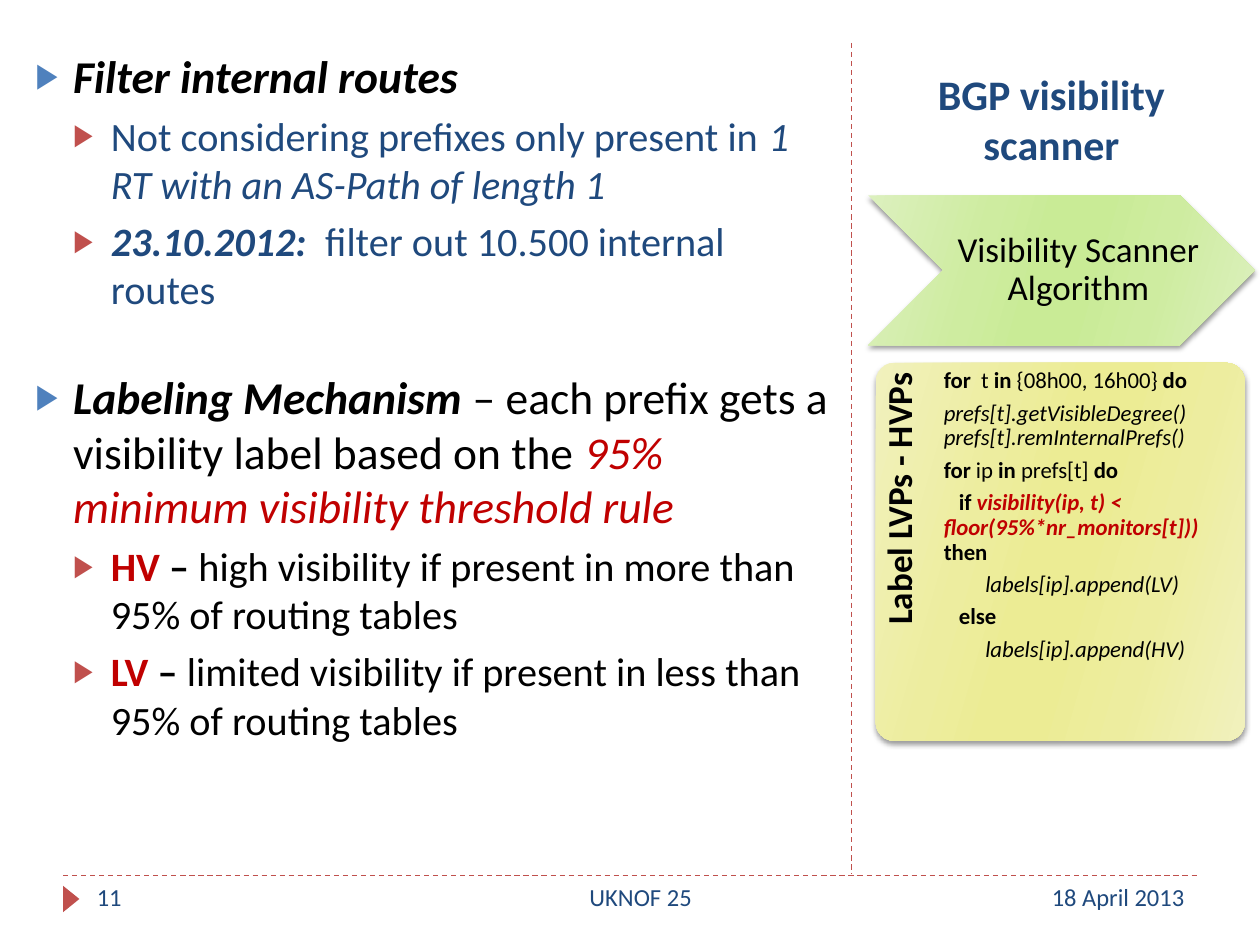
from dataclasses import dataclass

from lxml.etree import SubElement
from pptx import Presentation
from pptx.dml.color import RGBColor
from pptx.enum.dml import MSO_LINE
from pptx.enum.shapes import MSO_CONNECTOR, MSO_SHAPE
from pptx.enum.text import MSO_ANCHOR, MSO_AUTO_SIZE, PP_ALIGN
from pptx.oxml import parse_xml
from pptx.oxml.ns import nsdecls, qn
from pptx.util import Inches, Pt

BLACK = RGBColor(0x00, 0x00, 0x00)
NAVY = RGBColor(0x1F, 0x49, 0x7D)
BLUE = RGBColor(0x4F, 0x81, 0xBD)
RED = RGBColor(0xC0, 0x50, 0x4D)
DARK_RED = RGBColor(0xC0, 0x00, 0x00)
GREENS = [RGBColor(0xDC, 0xF0, 0xBE), RGBColor(0xCE, 0xEC, 0xA0), RGBColor(0xC9, 0xEB, 0x96)]
YELLOWS = [RGBColor(0xF1, 0xF1, 0xBD), RGBColor(0xED, 0xED, 0x9F), RGBColor(0xEC, 0xEC, 0x94)]
FONT = "Calibri"
BULLET_SIZES = [26, 23]
BULLET_COLORS = [BLUE, RED]


@dataclass
class Span:
    text: str
    bold: bool = False
    italic: bool = False
    color: RGBColor = BLACK


@dataclass
class Bullet:
    level: int
    spans: list[Span]
    before: float


@dataclass
class CodeLine:
    spans: list[Span]
    indent: float = 0


BULLETS = [
    Bullet(0, [Span("Filter internal routes", True, True)], 6),
    Bullet(1, [Span("Not considering prefixes only present in ", color=NAVY),
               Span("1 RT with an AS-Path of length 1", italic=True, color=NAVY)], 5),
    Bullet(1, [Span("23.10.2012: ", True, True, NAVY),
               Span(" filter out 10.500 internal routes", color=NAVY)], 5),
    Bullet(0, [Span("Labeling Mechanism ", True, True),
               Span("– each prefix gets a visibility label based on the "),
               Span("95% minimum visibility threshold rule", italic=True, color=DARK_RED)], 32),
    Bullet(1, [Span("HV", True, color=DARK_RED), Span(" – ", True),
               Span("high visibility if present in more than 95% of routing tables")], 5),
    Bullet(1, [Span("LV", True, color=DARK_RED), Span(" – ", True),
               Span("limited visibility if present in less than 95% of routing tables")], 5),
]

CODE = [
    CodeLine([Span("for ", True), Span(" t "), Span("in", True),
              Span(" {08h00, 16h00} "), Span("do", True)]),
    CodeLine([Span("prefs[t].getVisibleDegree() prefs[t].remInternalPrefs()", italic=True)]),
    CodeLine([Span("for ", True), Span("ip "), Span("in ", True),
              Span("prefs[t] "), Span("do", True)]),
    CodeLine([Span("if ", True),
              Span("visibility(ip, t) < floor(95%*nr_monitors[t])) ", True, True, DARK_RED),
              Span("then", True)], 0.12),
    CodeLine([Span("labels[ip].append(LV)", italic=True)], 0.33),
    CodeLine([Span("else", True)], 0.12),
    CodeLine([Span("labels[ip].append(HV)", italic=True)], 0.33),
]


def write_spans(para, spans: list[Span], size: float) -> None:
    for span in spans:
        run = para.add_run()
        run.text = span.text
        font = run.font
        font.name, font.size = FONT, Pt(size)
        font.bold, font.italic = span.bold, span.italic
        font.color.rgb = span.color


def add_paragraph(frame, index: int):
    return frame.paragraphs[0] if index == 0 else frame.add_paragraph()


def place(shape, left: float, top: float, width: float, height: float) -> None:
    shape.left, shape.top = Inches(left), Inches(top)
    shape.width, shape.height = Inches(width), Inches(height)


def add_box(page, area: tuple, insets: tuple = (0.1, 0.05, 0.1, 0.05)):
    box = page.shapes.add_textbox(*map(Inches, area))
    frame = box.text_frame
    frame.word_wrap = True
    frame.margin_left, frame.margin_top, frame.margin_right, frame.margin_bottom = map(Inches, insets)
    return box


def add_label(page, area: tuple, span: Span, size: float, align, **box_options):
    box = add_box(page, area, **box_options)
    para = box.text_frame.paragraphs[0]
    para.alignment = align
    write_spans(para, [span], size)
    return box


def add_dashed_line(page, start: tuple, end: tuple) -> None:
    line = page.shapes.add_connector(MSO_CONNECTOR.STRAIGHT, *map(Inches, start + end))
    line.line.color.rgb = RED
    line.line.width = Pt(0.75)
    line.line.dash_style = MSO_LINE.DASH
    SubElement(line._element.spPr, qn("a:effectLst"))


def add_glossy_shape(page, kind, area: tuple, colors: list[RGBColor]):
    """Add a shape with a mirrored gradient and a soft shadow below it."""
    shape = page.shapes.add_shape(kind, *map(Inches, area))
    shape.line.fill.background()
    outer, middle, center = colors
    stops = zip((0, 30, 45, 55, 73, 100), (outer, middle, center, center, middle, outer))
    marks = "".join(f'<a:gs pos="{position * 1000}"><a:srgbClr val="{color}"/></a:gs>'
                    for position, color in stops)
    properties = shape._element.spPr
    properties.find(qn("a:prstGeom")).addnext(parse_xml(
        f'<a:gradFill {nsdecls("a")} rotWithShape="1"><a:gsLst>{marks}</a:gsLst>'
        f'<a:lin ang="{16 * 60000}" scaled="0"/></a:gradFill>'))
    properties.append(parse_xml(
        f'<a:effectLst {nsdecls("a")}><a:outerShdw blurRad="{Pt(3)}" dist="{Pt(2)}" '
        f'dir="{90 * 60000}" rotWithShape="0"><a:srgbClr val="{BLACK}">'
        '<a:alpha val="40000"/></a:srgbClr></a:outerShdw></a:effectLst>'))
    return shape


def set_bullet(para, level: int) -> None:
    properties = para._p.get_or_add_pPr()
    properties.set("marL", str(Inches(0.3 * (level + 1))))
    properties.set("indent", str(Inches(-0.3)))
    color = SubElement(properties, qn("a:buClr"))
    SubElement(color, qn("a:srgbClr"), val=str(BULLET_COLORS[level]))
    SubElement(properties, qn("a:buSzPct"), val="76000")
    SubElement(properties, qn("a:buChar"), char="▶")


def fill_body(body) -> None:
    place(body, 0.18, 0.33, 6.56, 6.25)
    frame = body.text_frame
    frame.auto_size = MSO_AUTO_SIZE.NONE
    for index, bullet in enumerate(BULLETS):
        para = add_paragraph(frame, index)
        para.level = bullet.level
        para.space_before = Pt(bullet.before)
        set_bullet(para, bullet.level)
        write_spans(para, bullet.spans, BULLET_SIZES[bullet.level])


def fill_title(title) -> None:
    place(title, 6.81, 0.47, 3.07, 0.92)
    frame = title.text_frame
    frame.auto_size = MSO_AUTO_SIZE.NONE
    frame.vertical_anchor = MSO_ANCHOR.BOTTOM
    para = frame.paragraphs[0]
    para.alignment = PP_ALIGN.CENTER
    write_spans(para, [Span("BGP visibility scanner", True, color=NAVY)], 24)


def add_code(page) -> None:
    box = add_box(page, (7.49, 2.88, 2.18, 3), (0, 0.05, 0, 0))
    for index, line in enumerate(CODE):
        para = add_paragraph(box.text_frame, index)
        para.line_spacing = 0.9
        para.space_after = Pt(4.5)
        para._p.get_or_add_pPr().set("indent", str(Inches(line.indent)))
        write_spans(para, line.spans, 13)


def add_footer(page) -> None:
    marker = page.shapes.add_shape(MSO_SHAPE.ISOSCELES_TRIANGLE, *map(Inches, (0.46, 7.07, 0.21, 0.13)))
    marker.rotation = 90
    marker.shadow.inherit = False
    marker.fill.solid()
    marker.fill.fore_color.rgb = RED
    marker.line.fill.background()
    for text, left, width, align in [("11", 0.67, 2.17, PP_ALIGN.LEFT),
                                     ("UKNOF 25", 3.17, 3.83, PP_ALIGN.CENTER),
                                     ("18 April 2013", 7, 2.5, PP_ALIGN.RIGHT)]:
        add_label(page, (left, 6.95, width, 0.4), Span(text, color=NAVY), 14, align)


def main() -> None:
    deck = Presentation()
    deck.slide_width, deck.slide_height = Inches(10), Inches(7.5)
    page = deck.slides.add_slide(deck.slide_layouts[1])
    add_dashed_line(page, (0.5, 6.95), (9.5, 6.95))
    add_dashed_line(page, (6.76, 0.34), (6.76, 6.94))
    fill_title(page.shapes.title)
    fill_body(page.placeholders[1])
    add_footer(page)

    panel = add_glossy_shape(page, MSO_SHAPE.ROUNDED_RECTANGLE, (6.95, 2.88, 2.93, 3), YELLOWS)
    panel.adjustments[0] = 0.05
    side_label = add_label(page, (5.79, 4.05, 2.91, 0.59), Span("Label LVPs - HVPs", True), 20,
                           PP_ALIGN.RIGHT, insets=(0, 0.05, 0.07, 0))
    side_label.rotation = 270
    side_label.text_frame.paragraphs[0].line_spacing = 0.9
    add_code(page)

    add_glossy_shape(page, MSO_SHAPE.CHEVRON, (6.89, 1.55, 3.07, 1.19), GREENS)
    step = add_label(page, (7.34, 1.55, 2.38, 1.19), Span("Visibility Scanner Algorithm"), 20,
                     PP_ALIGN.CENTER, insets=(0.1, 0.04, 0.04, 0.04))
    step.text_frame.vertical_anchor = MSO_ANCHOR.MIDDLE
    step.text_frame.paragraphs[0].line_spacing = 0.9
    deck.save("out.pptx")


if __name__ == "__main__":
    main()
